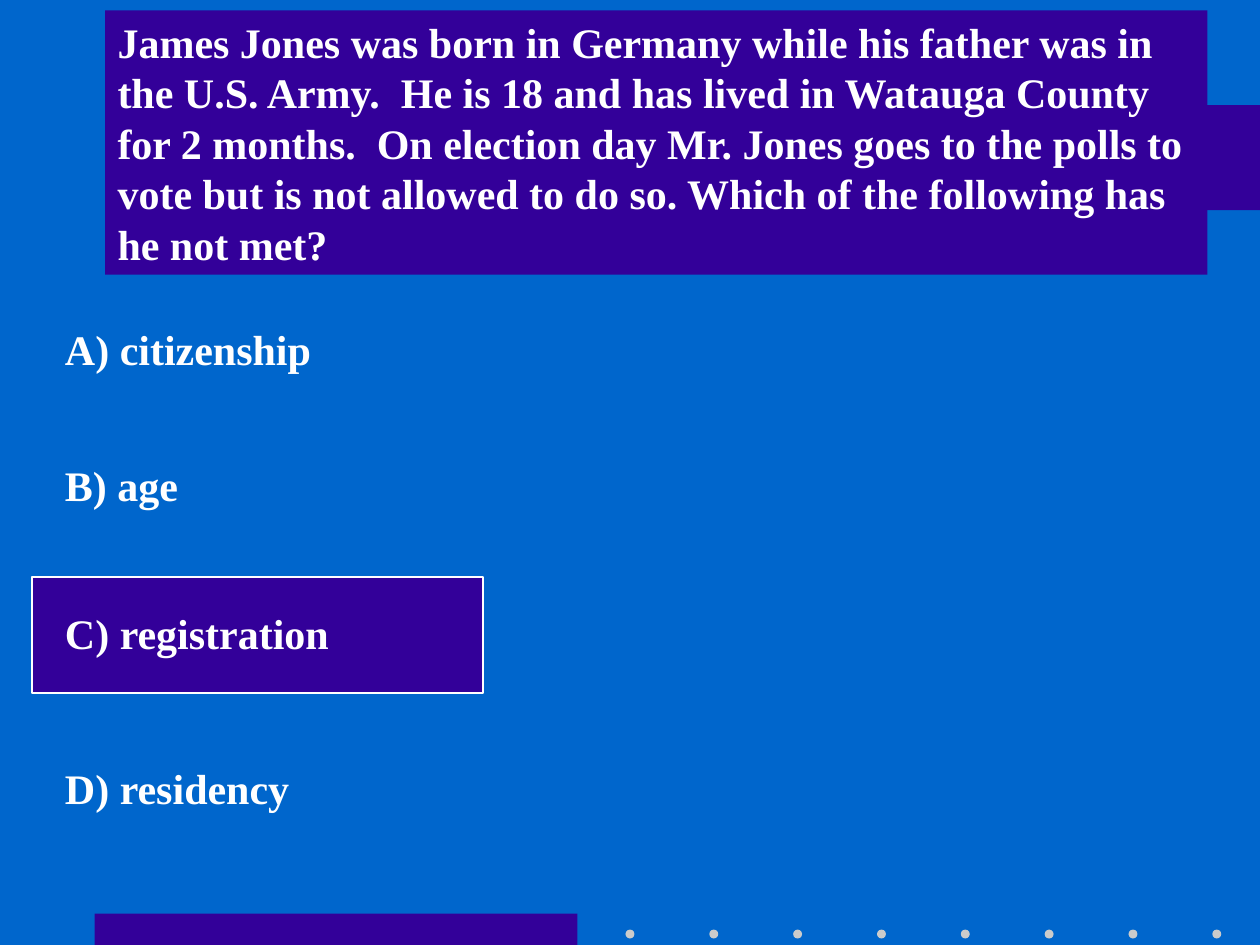
from pptx import Presentation
from pptx import util as u
from pptx.dml.color import RGBColor
from pptx.enum import shapes, text

BLUE = RGBColor(0x00, 0x66, 0xCC)
INDIGO = RGBColor(0x33, 0x00, 0x99)
SILVER = RGBColor(0xCB, 0xCB, 0xCB)
WHITE = RGBColor(0xFF, 0xFF, 0xFF)

QUESTION = (
    "James Jones was born in Germany while his father was in the U.S. Army.  "
    "He is 18 and has lived in Watauga County for 2 months.  "
    "On election day Mr. Jones goes to the polls to vote but is not allowed to do so. "
    "Which of the following has he not met?"
)
ANSWERS = [  # wording, top, width
    ("A) citizenship", 6.4, 23.7),
    ("B) age", 9.14, 23.29),
    ("C) registration", 12.12, 23.29),
    ("D) residency", 15.24, 23.29),
]
DOT_COUNT, DOT_LEFT, DOT_PITCH, DOT_SIZE = 8, 12.61, 1.69, 0.18


def write(frame, wording, font="Times New Roman", size=24, color=WHITE, bold=True):
    frame.word_wrap = True
    frame.auto_size = text.MSO_AUTO_SIZE.SHAPE_TO_FIT_TEXT
    frame.vertical_anchor = text.MSO_ANCHOR.TOP
    paragraph = frame.paragraphs[0]
    paragraph.alignment = text.PP_ALIGN.LEFT
    run = paragraph.add_run()
    run.text = wording
    run.font.name = font
    run.font.size = u.Pt(size)
    run.font.bold = bold
    run.font.color.rgb = color


class QuizSlide:
    def __init__(self, slide, background):
        self.slide = slide
        slide.background.fill.solid()
        slide.background.fill.fore_color.rgb = background

    def block(self, left, top, width, height, fill=INDIGO, line=None,
              kind=shapes.MSO_SHAPE.RECTANGLE):
        shape = self.slide.shapes.add_shape(
            kind, u.Cm(left), u.Cm(top), u.Cm(width), u.Cm(height))
        shape.shadow.inherit = False
        shape.fill.solid()
        shape.fill.fore_color.rgb = fill
        if line is None:
            shape.line.fill.background()
        else:
            shape.line.color.rgb = line
            shape.line.width = u.Pt(1)
        return shape

    def dot(self, left, top):
        self.block(left, top, DOT_SIZE, DOT_SIZE, SILVER, kind=shapes.MSO_SHAPE.OVAL)

    def label(self, left, top, width, height, wording):
        box = self.slide.shapes.add_textbox(
            u.Cm(left), u.Cm(top), u.Cm(width), u.Cm(height))
        write(box.text_frame, wording)


def main():
    deck = Presentation()
    deck.slide_width, deck.slide_height = u.Cm(25.4), u.Cm(19.05)
    quiz = QuizSlide(deck.slides.add_slide(deck.slide_layouts[6]), BLUE)

    quiz.block(1.91, 18.42, 9.73, 0.63)
    for i in range(DOT_COUNT):
        quiz.dot(DOT_LEFT + i * DOT_PITCH, 18.74)
    quiz.block(2.12, 2.12, 23.28, 2.12)

    quiz.block(0.64, 11.64, 9.1, 2.33, line=WHITE)
    question = quiz.block(2.12, 0.21, 22.22, 5.33)
    write(question.text_frame, QUESTION)
    for wording, top, width in ANSWERS:
        quiz.label(1.06, top, width, 1.27, wording)

    deck.save("out.pptx")


if __name__ == "__main__":
    main()
